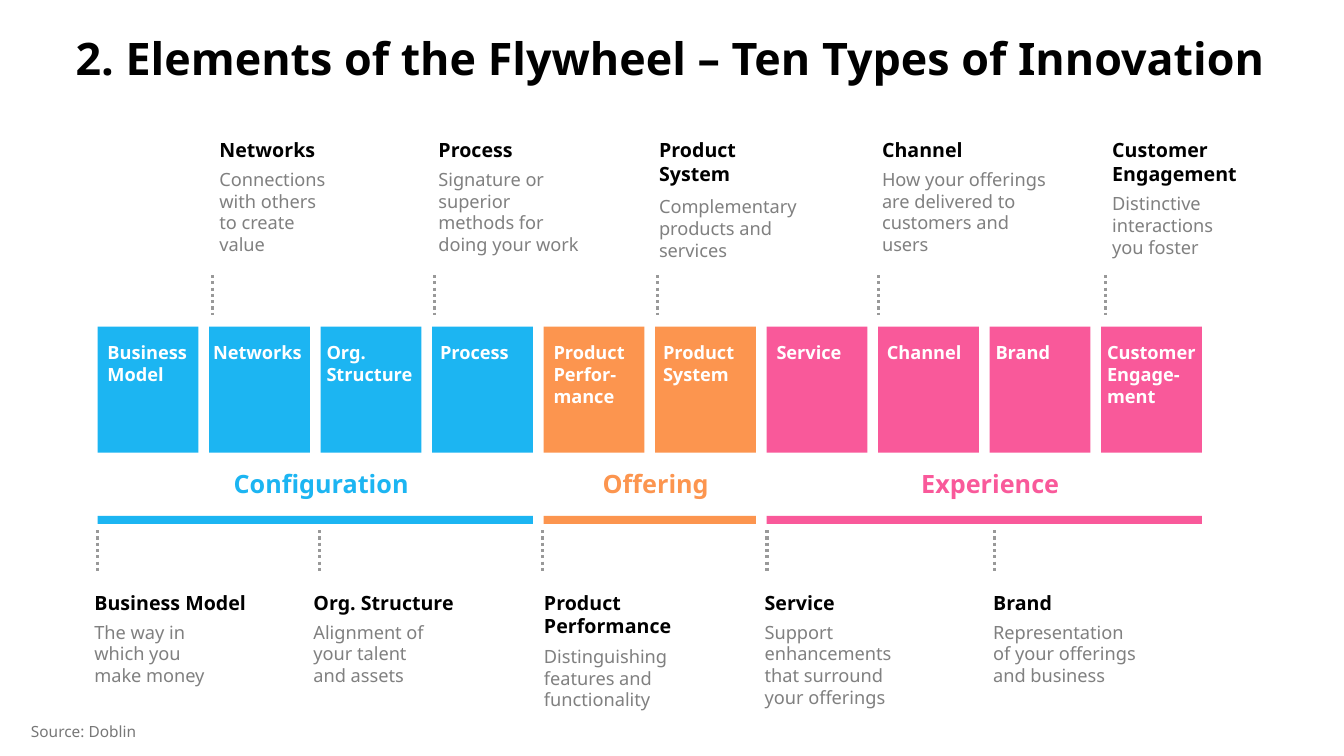
from lxml.etree import SubElement
from pptx import Presentation
from pptx.dml.color import RGBColor
from pptx.enum.dml import MSO_LINE_DASH_STYLE as DASH
from pptx.enum.shapes import MSO_CONNECTOR, MSO_SHAPE
from pptx.enum.text import MSO_ANCHOR, MSO_AUTO_SIZE, PP_ALIGN
from pptx.oxml.ns import qn
from pptx.util import Cm, Pt

COLORS = {
    "black": "000000", "white": "FFFFFF", "body": "808080",
    "dots": "999999", "source": "777777",
    "Configuration": "1CB5F2", "Offering": "FC954F", "Experience": "F9599A",
}
FORMATS = {
    "title": {"size": Pt(32), "bold": True},
    "group": {"size": Pt(18), "bold": True},
    "tile": {"size": Pt(13), "bold": True},
    "heading": {"size": Pt(14), "bold": True},
    "body": {"size": Pt(13), "bold": False},
    "source": {"size": Pt(11), "bold": False},
}


def write(shape, text, style, color, align=PP_ALIGN.LEFT, wrap=True):
    frame = shape.text_frame
    frame.text = text
    frame.word_wrap = wrap
    for paragraph in frame.paragraphs:
        paragraph.alignment = align
        for run in paragraph.runs:
            values = {"name": "Noto Sans", **FORMATS[style]}
            for attribute, value in values.items():
                setattr(run.font, attribute, value)
            run.font.color.rgb = RGBColor.from_string(COLORS[color])


def add_bar(left, top, width, height, color):
    bar = slide.shapes.add_shape(
        MSO_SHAPE.RECTANGLE, Cm(left), Cm(top), Cm(width), Cm(height))
    bar.shadow.inherit = False
    bar.fill.solid()
    bar.fill.fore_color.rgb = RGBColor.from_string(COLORS[color])
    bar.line.fill.background()


presentation = Presentation()
presentation.slide_width, presentation.slide_height = Cm(33.87), Cm(19.05)
slide = presentation.slides.add_slide(presentation.slide_layouts[5])
add_text = slide.shapes.add_textbox

# Title
title = slide.shapes.title
title.left, title.top, title.width, title.height = Cm(1.65), Cm(0), Cm(30.81), Cm(3.05)
write(title, "2. Elements of the Flywheel – Ten Types of Innovation", "title", "black")
title.text_frame.vertical_anchor = MSO_ANCHOR.MIDDLE
title.text_frame.auto_size = MSO_AUTO_SIZE.NONE
title.text_frame.paragraphs[0].line_spacing = 0.9

# Tiles by group: label, label shift, label lines
FIRST, PITCH, TILE = 2.46, 2.81, 2.54
groups = [
    ("Configuration", 4.98, [
        ("Business\nModel", 0, 2), ("Networks", -0.15, 1),
        ("Org.\vStructure", -0.1, 2), ("Process", -0.05, 1)]),
    ("Offering", 3.23, [
        ("Product\nPerfor-mance", 0, 3), ("Product\nSystem", -0.05, 2)]),
    ("Experience", 4.01, [
        ("Service", 0, 1), ("Channel", -0.03, 1),
        ("Brand", -0.1, 1), ("Customer\nEngage-\nment", -0.1, 3)]),
]
position = 0
for group, name_width, tiles in groups:
    start = FIRST + position * PITCH
    span = (len(tiles) - 1) * PITCH + TILE
    for label, shift, lines in tiles:
        left = FIRST + position * PITCH
        add_bar(left, 8.23, TILE, 3.18, group)
        tile_label = add_text(Cm(left + shift), Cm(8.48), Cm(2.95), Cm(0.25 + 0.56 * lines))
        write(tile_label, label, "tile", "white")
        position += 1
    add_bar(start, 13.0, span, 0.2, group)
    group_name = add_text(
        Cm(start + 0.15 + (span - name_width) / 2), Cm(11.68), Cm(name_width), Cm(1.02))
    write(group_name, group, "group", group, PP_ALIGN.CENTER, wrap=False)

# Callouts: dotted line x, text x, heading, its width, body, its width, body drop
rows = [
    (6.93, 3.35, [
        (5.36, 5.28, "Networks", 3.94,
         "Connections with others to create value", 3.43, 0.76),
        (10.95, 10.8, "Process", 3.94,
         "Signature or superior methods for doing your work", 4.24, 0.76),
        (16.56, 16.36, "Product System", 3.94,
         "Complementary products and services", 4.24, 1.45),
        (22.15, 21.98, "Channel", 2.79,
         "How your offerings are delivered to customers and users", 4.83, 0.76),
        (27.86, 27.78, "Customer\nEngagement", 3.94,
         "Distinctive interactions you foster", 3.66, 1.37)]),
    (13.36, 14.76, [
        (2.46, 2.13, "Business Model", 4.42,
         "The way in\nwhich you\nmake money", 3.99, 0.76),
        (8.05, 7.65, "Org. Structure", 4.22,
         "Alignment of your talent\nand assets", 3.99, 0.76),
        (13.67, 13.46, "Product Performance", 3.94,
         "Distinguishing features and\nfunctionality", 3.99, 1.37),
        (19.33, 19.02, "Service", 2.79,
         "Support enhancements that surround your offerings", 3.99, 0.76),
        (25.07, 24.78, "Brand", 3.94,
         "Representation of your offerings and business", 4.24, 0.76)]),
]
for line_top, text_top, callouts in rows:
    for line_x, left, heading, heading_width, body, body_width, drop in callouts:
        dots = slide.shapes.add_connector(
            MSO_CONNECTOR.STRAIGHT, Cm(line_x), Cm(line_top), Cm(line_x), Cm(line_top + 1.02))
        dots.line.color.rgb = RGBColor.from_string(COLORS["dots"])
        dots.line.width = Pt(2.25)
        dots.line.dash_style = DASH.ROUND_DOT
        SubElement(dots._element.spPr, qn("a:effectLst"))
        heading_box = add_text(
            Cm(left), Cm(text_top), Cm(heading_width), Cm(0.86 if drop < 1 else 1.45))
        write(heading_box, heading, "heading", "black")
        body_box = add_text(Cm(left), Cm(text_top + drop), Cm(body_width), Cm(1.93))
        write(body_box, body, "body", "body")

# Source
source = add_text(Cm(0.53), Cm(18.06), Cm(3.2), Cm(0.74))
write(source, "Source: Doblin", "source", "source", wrap=False)

presentation.save("out.pptx")
